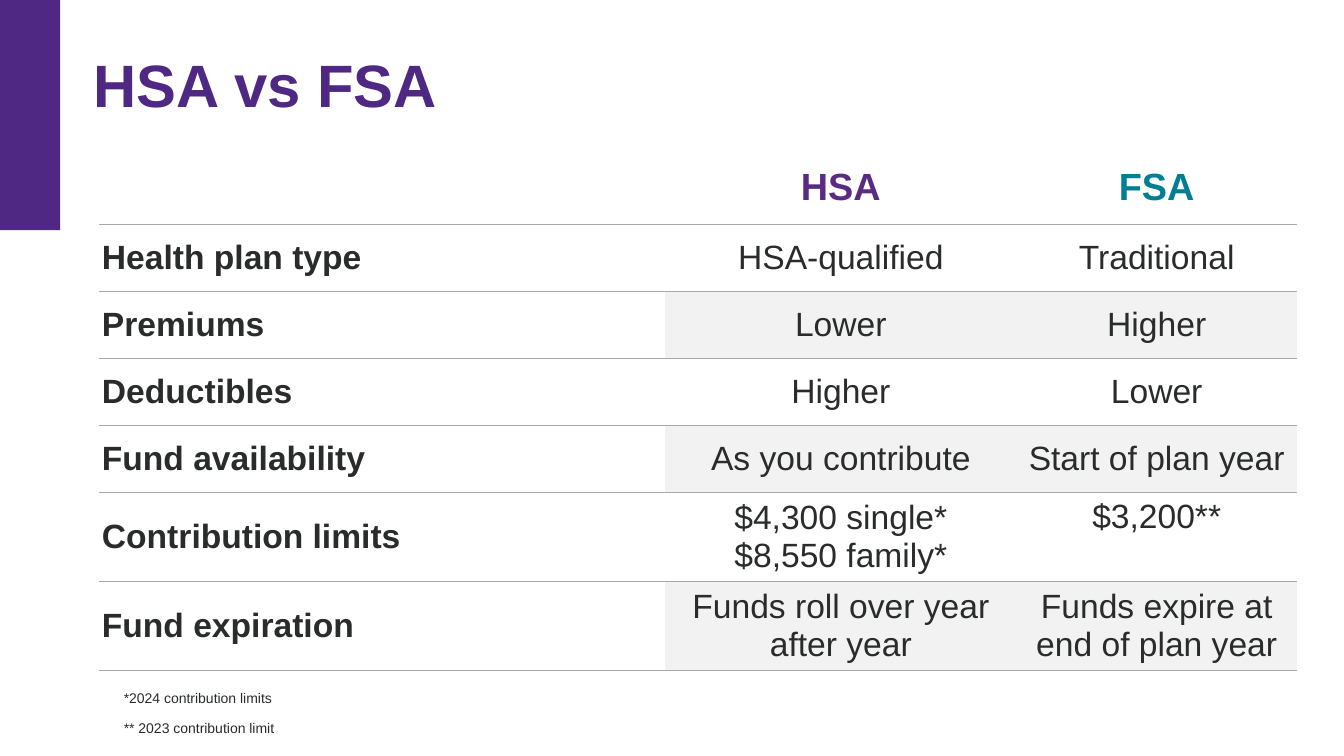
import pptx
import pptx.util
from lxml import etree
from pptx.dml.color import RGBColor
from pptx.enum.shapes import MSO_SHAPE
from pptx.enum.text import MSO_ANCHOR, PP_ALIGN
from pptx.oxml.ns import qn
from pptx.util import Cm, Pt

TITLE = "HSA vs FSA"
ROWS = [
    ("", "HSA", "FSA"),
    ("Health plan type", "HSA-qualified", "Traditional"),
    ("Premiums", "Lower", "Higher"),
    ("Deductibles", "Higher", "Lower"),
    ("Fund availability", "As you contribute", "Start of plan year"),
    ("Contribution limits", "$4,300 single*\n$8,550 family*", "$3,200**"),
    ("Fund expiration", "Funds roll over year after year", "Funds expire at end of plan year"),
]
FOOTNOTES = "*2024 contribution limits\n** 2023 contribution limit"

FONT = "Arial"
PURPLE = RGBColor(0x4F, 0x28, 0x83)
HSA_PURPLE = RGBColor(0x59, 0x2C, 0x82)
FSA_TEAL = RGBColor(0x00, 0x7F, 0x93)
INK = RGBColor(0x2A, 0x2C, 0x2C)
BAND = RGBColor(0xF2, 0xF2, 0xF2)
RULE = RGBColor(0xA7, 0xA8, 0xAB)

HEADER_COLORS = (INK, HSA_PURPLE, FSA_TEAL)
COLUMN_WIDTHS = (Cm(14.28), Cm(8.84), Cm(7.08))
ROW_HEIGHTS = (Cm(1.86),) + (Cm(1.69),) * 4 + (Cm(2.25),) * 2
LIMITS_ROW, FSA_COLUMN = 5, 2


def format_text(text_frame, size, color, bold=False, align=PP_ALIGN.LEFT):
    for paragraph in text_frame.paragraphs:
        paragraph.alignment = align
        for run in paragraph.runs:
            font = run.font
            font.name, font.size, font.bold = FONT, Pt(size), bold
            font.color.rgb = color


def add_text(slide, text, left, top, width, height):
    text_frame = slide.shapes.add_textbox(left, top, width, height).text_frame
    text_frame.word_wrap = True
    text_frame.text = text
    return text_frame


def set_borders(cell, has_top):
    """Rule the cell above and below only; border elements go before the fill."""
    properties = cell._tc.get_or_add_tcPr()
    visible = {"a:lnT": has_top, "a:lnB": True}
    for index, tag in enumerate(("a:lnL", "a:lnR", "a:lnT", "a:lnB")):
        line = etree.Element(qn(tag), w=str(Pt(0.5)))
        if visible.get(tag):
            fill = etree.SubElement(line, qn("a:solidFill"))
            etree.SubElement(fill, qn("a:srgbClr"), val=str(RULE))
        else:
            etree.SubElement(line, qn("a:noFill"))
        properties.insert(index, line)


def fill_cell(cell, text, row, column):
    cell.margin_left = cell.margin_right = Cm(0.08)
    cell.margin_top = cell.margin_bottom = Cm(0.03)
    cell.vertical_anchor = MSO_ANCHOR.MIDDLE
    if (row, column) == (LIMITS_ROW, FSA_COLUMN):
        cell.vertical_anchor = MSO_ANCHOR.TOP
        cell.margin_top = Cm(0.15)
    if column and row and row % 2 == 0:
        cell.fill.solid()
        cell.fill.fore_color.rgb = BAND
    else:
        cell.fill.background()
    set_borders(cell, has_top=row > 0)
    cell.text_frame.text = text
    format_text(
        cell.text_frame,
        size=24 if row else 27,
        color=INK if row else HEADER_COLORS[column],
        bold=row == 0 or column == 0,
        align=PP_ALIGN.CENTER if column else PP_ALIGN.LEFT,
    )


def add_comparison(slide):
    table = slide.shapes.add_table(
        len(ROWS), len(COLUMN_WIDTHS), Cm(2.49), Cm(3.78),
        sum(COLUMN_WIDTHS), sum(ROW_HEIGHTS),
    ).table
    table.first_row = table.horz_banding = False
    for column, width in zip(table.columns, COLUMN_WIDTHS):
        column.width = width
    for row, height in zip(table.rows, ROW_HEIGHTS):
        row.height = height
    for row, texts in enumerate(ROWS):
        for column, text in enumerate(texts):
            fill_cell(table.cell(row, column), text, row, column)


def main():
    presentation = pptx.Presentation()
    presentation.slide_width, presentation.slide_height = Cm(33.87), Cm(19.05)
    slide = presentation.slides.add_slide(presentation.slide_layouts[6])

    accent_bar = slide.shapes.add_shape(MSO_SHAPE.RECTANGLE, 0, 0, Cm(1.52), Cm(5.8))
    accent_bar.shadow.inherit = False
    accent_bar.fill.solid()
    accent_bar.fill.fore_color.rgb = PURPLE
    accent_bar.line.fill.background()

    title = add_text(slide, TITLE, Cm(2.36), Cm(1.02), Cm(30.1), Cm(1.88))
    title.margin_left = title.margin_right = title.margin_top = title.margin_bottom = 0
    title.paragraphs[0].line_spacing = 1.1
    format_text(title, 42.7, PURPLE, bold=True)

    add_comparison(slide)

    footnotes = add_text(slide, FOOTNOTES, Cm(2.87), Cm(17.12), Cm(21.92), Cm(1.52))
    for paragraph in footnotes.paragraphs:
        paragraph.line_spacing = 1.3
        paragraph.space_after = Pt(6)
    format_text(footnotes, 10, INK)

    presentation.save("out.pptx")


if __name__ == "__main__":
    main()
